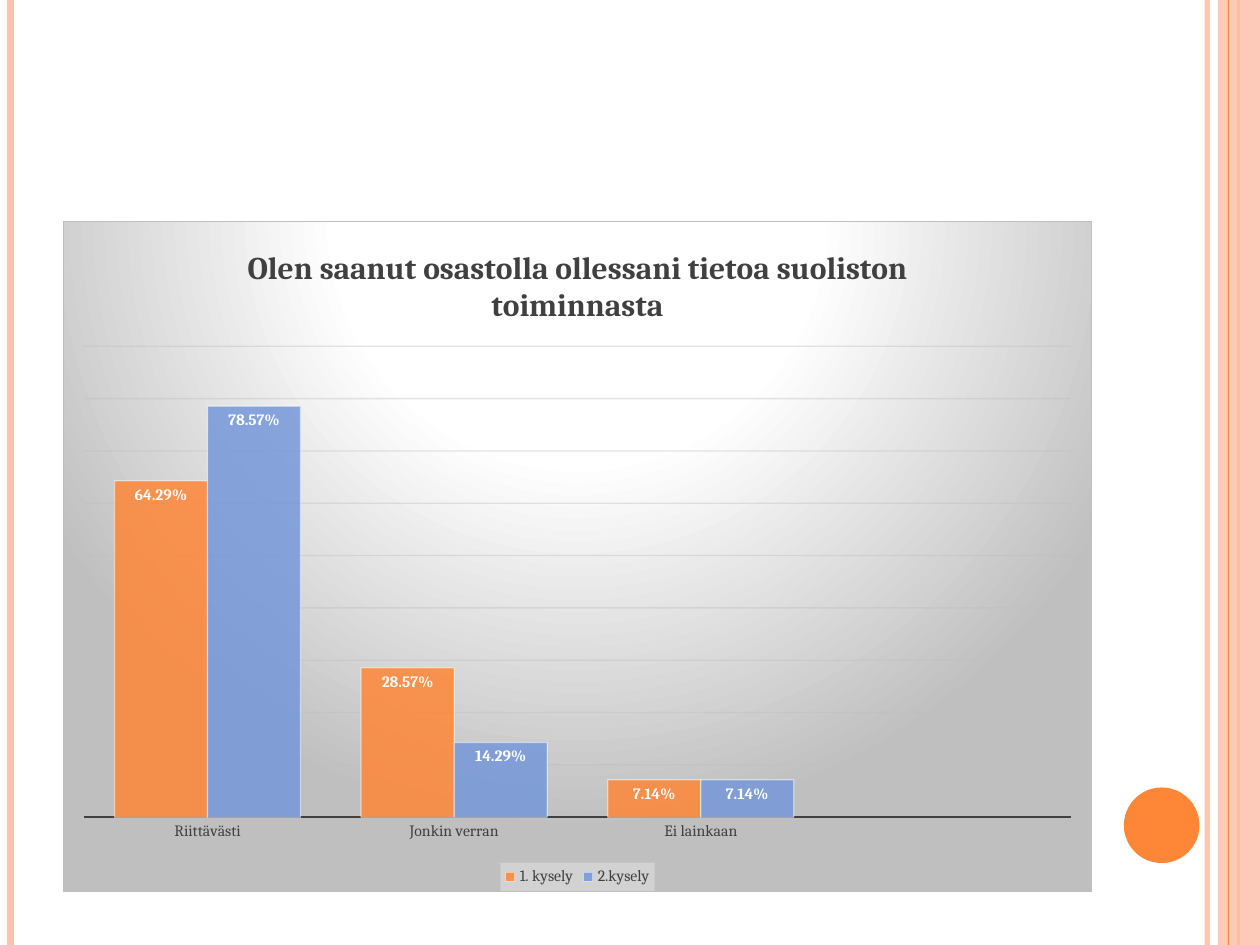
from lxml import etree
from pptx import Presentation
from pptx.chart.data import CategoryChartData
from pptx.dml.color import RGBColor
from pptx.enum.chart import XL_CHART_TYPE, XL_LABEL_POSITION, XL_LEGEND_POSITION, XL_TICK_MARK
from pptx.enum.shapes import MSO_CONNECTOR, MSO_SHAPE
from pptx.oxml import parse_xml
from pptx.oxml.ns import nsdecls, qn
from pptx.util import Pt

COLUMNS = XL_CHART_TYPE.COLUMN_CLUSTERED
INSIDE_END = XL_LABEL_POSITION.INSIDE_END
BOTTOM = XL_LEGEND_POSITION.BOTTOM
NO_TICK = XL_TICK_MARK.NONE
STRAIGHT = MSO_CONNECTOR.STRAIGHT

ORANGE = RGBColor(0xFE, 0x86, 0x37)
PEACH = RGBColor(0xFE, 0xC3, 0xAE)
BLUE = RGBColor(0x75, 0x98, 0xD9)
RED = RGBColor(0xB3, 0x2C, 0x16)
WHITE = RGBColor(0xFF, 0xFF, 0xFF)
DARK = RGBColor(0x40, 0x40, 0x40)
GRID = RGBColor(0xBF, 0xBF, 0xBF)

FONT = "Cambria"
WIDTH, HEIGHT = 720, 540

TITLE = "Olen saanut osastolla ollessani tietoa suoliston toiminnasta"
CATEGORIES = ["Riittävästi", "Jonkin verran", "Ei lainkaan", ""]
SERIES = [
    ("1. kysely", [0.6429, 0.2857, 0.0714, None], ORANGE),
    ("2.kysely", [0.7857, 0.1429, 0.0714, None], BLUE),
    ("Sarake1", [], RED),
]
CHART_BOX = (36, 126, 588, 383.5)
PLOT_LAYOUT = {"x": 0.02, "y": 0.187, "w": 0.96, "h": 0.703}

# Vertical rules: x, colour, line width, opacity in percent
OUTER_RULES = [(689.95, PEACH, 3, 93), (6, PEACH, 4.5, 100), (707.75, ORANGE, 1.5, 100)]
INNER_RULES = [(702, ORANGE, 0.75, 100)]
BAND = (696, 0, 24, HEIGHT)
DISC = (642.25, 450, 43.2, 43.2)

CHART_FILL = f"""<c:spPr {nsdecls('c', 'a')}>
  <a:gradFill rotWithShape="1">
    <a:gsLst>
      <a:gs pos="0"><a:srgbClr val="FFFFFF"/></a:gs>
      <a:gs pos="39000"><a:srgbClr val="FFFFFF"/></a:gs>
      <a:gs pos="100000"><a:srgbClr val="BFBFBF"/></a:gs>
    </a:gsLst>
    <a:path path="circle"><a:fillToRect l="50000" t="-80000" r="50000" b="180000"/></a:path>
  </a:gradFill>
  <a:ln w="9525"><a:solidFill><a:srgbClr val="BFBFBF"/></a:solidFill></a:ln>
</c:spPr>"""
LEGEND_FILL = f"""<c:spPr {nsdecls('c', 'a')}>
  <a:solidFill><a:srgbClr val="F2F2F2"><a:alpha val="39000"/></a:srgbClr></a:solidFill>
</c:spPr>"""


def points(box):
    return [Pt(length) for length in box]


def set_opacity(properties, percent, line=False):
    """Set the opacity of the solid fill, or of the line, in an spPr element."""
    parent = properties.find(qn("a:ln")) if line else properties
    color = parent.find(qn("a:solidFill")).find(qn("a:srgbClr"))
    etree.SubElement(color, qn("a:alpha"), val=str(percent * 1000))


def style_font(font, size, color, bold=False):
    font.name, font.size, font.bold = FONT, Pt(size), bold
    font.color.rgb = color


def style_line(line, color, width):
    line.color.rgb = color
    line.width = Pt(width)


def add_rules(slide, rules):
    for x, color, width, opacity in rules:
        rule = slide.shapes.add_connector(STRAIGHT, Pt(x), 0, Pt(x), Pt(HEIGHT))
        style_line(rule.line, color, width)
        properties = rule._element.spPr
        if opacity < 100:
            set_opacity(properties, opacity, line=True)
        etree.SubElement(properties, qn("a:effectLst"))


def add_plain_shape(slide, kind, box, color):
    shape = slide.shapes.add_shape(kind, *points(box))
    shape.shadow.inherit = False
    shape.fill.solid()
    shape.fill.fore_color.rgb = color
    shape.line.fill.background()
    return shape


def style_series(series, color):
    series.format.fill.solid()
    series.format.fill.fore_color.rgb = color
    style_line(series.format.line, WHITE, 0.75)
    properties = series._element.spPr
    set_opacity(properties, 85)
    set_opacity(properties, 50, line=True)
    labels = series.data_labels
    labels.show_value = True
    labels.position = INSIDE_END
    labels.number_format = "0.00%"
    labels.number_format_is_linked = False
    style_font(labels.font, 9, WHITE, bold=True)


def drop_empty_data(series, values):
    """Remove blank category points, and the value list of a series without values."""
    element = series._element
    for point in list(element.find(qn("c:cat")).iter(qn("c:pt"))):
        if not point.findtext(qn("c:v")):
            point.getparent().remove(point)
    if not values:
        element.remove(element.find(qn("c:val")))


def style_axes(chart):
    category_axis = chart.category_axis
    category_axis.major_tick_mark = category_axis.minor_tick_mark = NO_TICK
    style_font(category_axis.tick_labels.font, 9, DARK)
    style_line(category_axis.format.line, DARK, 1.5)

    value_axis = chart.value_axis
    value_axis.visible = False
    value_axis.minimum_scale, value_axis.maximum_scale = 0, 0.9
    value_axis.major_unit = 0.1
    value_axis.tick_labels.number_format = "0.00%"
    value_axis.tick_labels.number_format_is_linked = False
    style_line(value_axis.major_gridlines.format.line, GRID, 0.75)
    gridlines = value_axis._element.find(qn("c:majorGridlines"))
    set_opacity(gridlines.find(qn("c:spPr")), 42, line=True)


def place_plot(chart):
    """Fix the inner plot area as fractions of the chart."""
    plot_area = chart.element.find(qn("c:chart")).find(qn("c:plotArea"))
    for layout in plot_area.findall(qn("c:layout")):
        plot_area.remove(layout)
    layout = etree.Element(qn("c:layout"))
    manual = etree.SubElement(layout, qn("c:manualLayout"))
    settings = {"layoutTarget": "inner", "xMode": "edge", "yMode": "edge", **PLOT_LAYOUT}
    for name, value in settings.items():
        etree.SubElement(manual, qn(f"c:{name}"), val=str(value))
    plot_area.insert(0, layout)


def add_survey_chart(slide):
    data = CategoryChartData(number_format="0.00%")
    data.categories = CATEGORIES
    for name, values, _ in SERIES:
        data.add_series(name, values)
    chart = slide.shapes.add_chart(COLUMNS, *points(CHART_BOX), data).chart
    chart.font.name, chart.font.size = FONT, Pt(10)

    chart.has_title = True
    title_frame = chart.chart_title.text_frame
    title_frame.text = TITLE
    style_font(title_frame.paragraphs[0].font, 18, DARK, bold=True)
    chart.chart_title.include_in_layout = False

    plot = chart.plots[0]
    plot.gap_width, plot.overlap = 65, 0
    plot.vary_by_categories = False
    for series, (_, values, color) in zip(plot.series, SERIES):
        style_series(series, color)
        drop_empty_data(series, values)
    style_axes(chart)
    place_plot(chart)

    chart.has_legend = True
    chart.legend.position = BOTTOM
    chart.legend.include_in_layout = False
    style_font(chart.legend.font, 9, DARK)
    chart_body = chart.element.find(qn("c:chart"))
    overlay = chart_body.find(qn("c:legend")).find(qn("c:overlay"))
    overlay.addnext(parse_xml(LEGEND_FILL))
    chart_body.addnext(parse_xml(CHART_FILL))


def main():
    presentation = Presentation()
    presentation.slide_width, presentation.slide_height = Pt(WIDTH), Pt(HEIGHT)
    slide = presentation.slides.add_slide(presentation.slide_layouts[6])
    add_rules(slide, OUTER_RULES)
    band = add_plain_shape(slide, MSO_SHAPE.RECTANGLE, BAND, PEACH)
    set_opacity(band._element.spPr, 87)
    add_rules(slide, INNER_RULES)
    add_plain_shape(slide, MSO_SHAPE.OVAL, DISC, ORANGE)
    add_survey_chart(slide)
    presentation.save("out.pptx")


if __name__ == "__main__":
    main()
